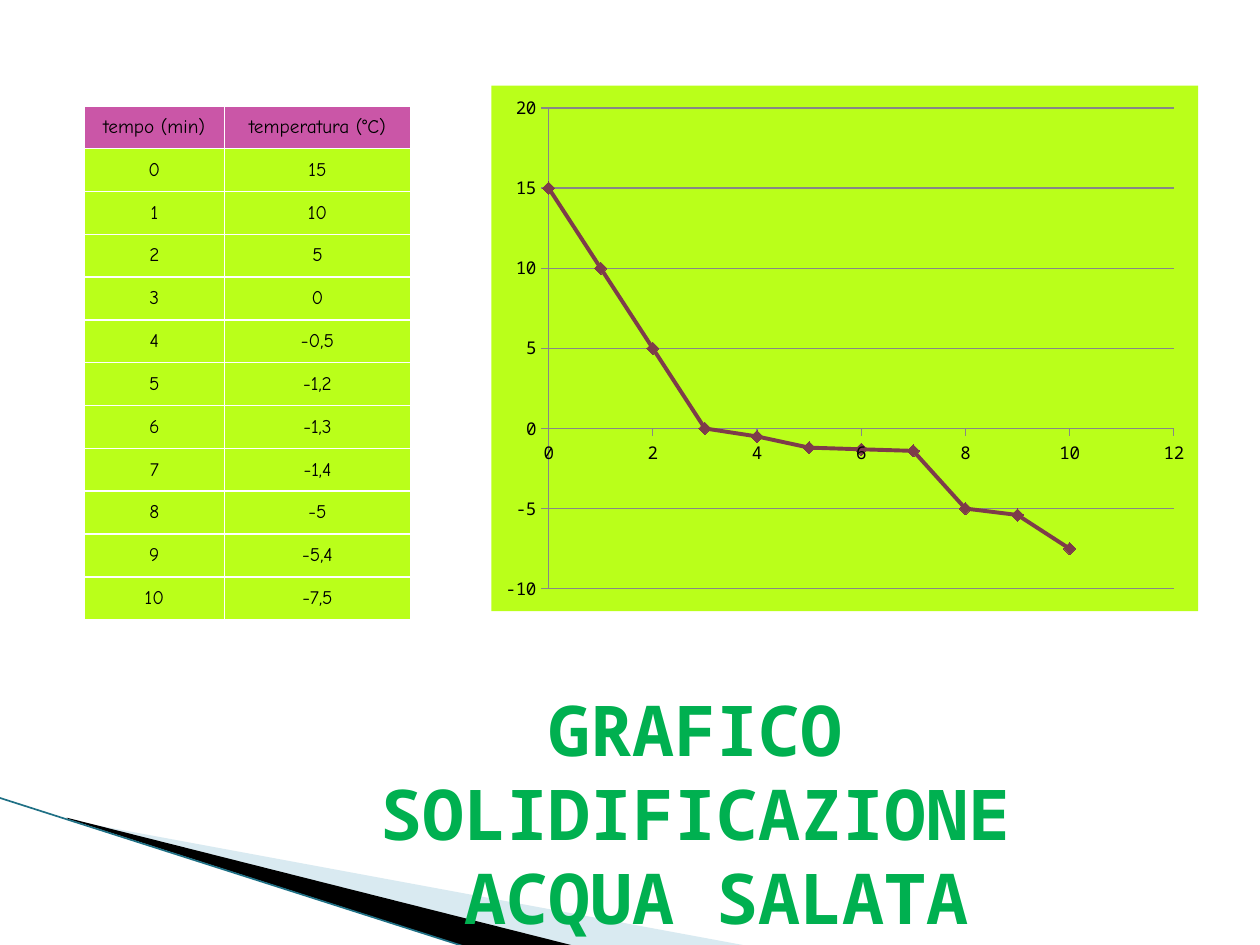
from lxml.etree import SubElement
from pptx import Presentation
from pptx.chart.data import XyChartData
from pptx.dml.color import RGBColor
from pptx.enum.chart import XL_CHART_TYPE, XL_MARKER_STYLE, XL_TICK_MARK
from pptx.enum.shapes import MSO_CONNECTOR
from pptx.enum.text import MSO_ANCHOR, MSO_AUTO_SIZE, PP_ALIGN
from pptx.oxml import parse_xml
from pptx.oxml.ns import nsdecls, qn
from pptx.util import Inches, Pt

TEMPERATURES = [15, 10, 5, 0, -0.5, -1.2, -1.3, -1.4, -5, -5.4, -7.5]
READINGS = list(enumerate(TEMPERATURES))


def rgb(color):
    return RGBColor.from_string(color)


class SlideBuilder:
    MONO = "Noto Sans Mono"
    HAND = "Comic Neue"
    BLACK = "000000"
    LIME = "BAFF1A"
    PINK = "CA56A7"
    GREEN = "00B050"
    MAROON = "7D3C4A"
    GRID = "878787"

    def __init__(self, prs):
        self.s = prs.slides.add_slide(prs.slide_layouts[5])

    def style(self, p, font, size, color, bold=False):
        p.alignment = PP_ALIGN.CENTER
        p.font.name, p.font.size, p.font.bold = font, Pt(size), bold
        p.font.color.rgb = rgb(color)

    def wedge(self, points, color, opacity=100):
        corners = [(Inches(x), Inches(y)) for x, y in points]
        builder = self.s.shapes.build_freeform(*corners[0])
        builder.add_line_segments(corners[1:], close=True)
        sp = builder.convert_to_shape()
        sp.shadow.inherit = False
        sp.line.fill.background()
        sp.fill.solid()
        sp.fill.fore_color.rgb = rgb(color)
        if opacity < 100:
            clr = sp.element.spPr.find(".//" + qn("a:srgbClr"))
            SubElement(clr, qn("a:alpha"), val=str(opacity * 1000))

    def line(self, x1, y1, x2, y2, color, width):
        ends = [Inches(v) for v in (x1, y1, x2, y2)]
        c = self.s.shapes.add_connector(MSO_CONNECTOR.STRAIGHT, *ends)
        c.line.color.rgb = rgb(color)
        c.line.width = Pt(width)
        SubElement(c.element.spPr, qn("a:effectLst"))

    def table(self, x, y, col_widths, row_height, rows):
        table = self.s.shapes.add_table(
            len(rows), len(col_widths), Inches(x), Inches(y),
            Inches(sum(col_widths)), Inches(row_height * len(rows))).table
        for col, width in zip(table.columns, col_widths):
            col.width = Inches(width)
        for i, row in enumerate(rows):
            table.rows[i].height = Inches(row_height)
            for j, text in enumerate(row):
                cell = table.cell(i, j)
                cell.fill.solid()
                cell.fill.fore_color.rgb = rgb(self.LIME if i else self.PINK)
                cell.margin_left = cell.margin_right = 0
                cell.margin_top = cell.margin_bottom = 0
                cell.vertical_anchor = MSO_ANCHOR.MIDDLE
                cell.text = text
                self.style(cell.text_frame.paragraphs[0], self.HAND, 11, self.BLACK)

    def axis(self, axis, low, high, step, grid):
        axis.minimum_scale, axis.maximum_scale, axis.major_unit = low, high, step
        axis.major_tick_mark = XL_TICK_MARK.OUTSIDE
        axis.minor_tick_mark = XL_TICK_MARK.NONE
        axis.has_major_gridlines = grid
        axis.format.line.color.rgb = rgb(self.GRID)
        if grid:
            axis.major_gridlines.format.line.color.rgb = rgb(self.GRID)

    def scatter(self, x, y, w, h, points):
        data = XyChartData()
        series = data.add_series("Series 1")
        for point in points:
            series.add_data_point(*point)
        chart = self.s.shapes.add_chart(
            XL_CHART_TYPE.XY_SCATTER_LINES, Inches(x), Inches(y),
            Inches(w), Inches(h), data).chart
        chart.has_legend = chart.has_title = False
        chart.font.name, chart.font.size = self.MONO, Pt(10)
        chart.font.color.rgb = rgb(self.BLACK)
        self.axis(chart.category_axis, 0, 12, 2, grid=False)
        self.axis(chart.value_axis, -10, 20, 5, grid=True)

        plot = chart.plots[0]
        plot.vary_by_categories = False
        curve = plot.series[0]
        curve.smooth = False
        curve.format.line.color.rgb = rgb(self.MAROON)
        curve.format.line.width = Pt(2.25)
        curve.marker.style = XL_MARKER_STYLE.DIAMOND
        curve.marker.size = 7
        curve.marker.format.fill.solid()
        curve.marker.format.fill.fore_color.rgb = rgb(self.MAROON)
        curve.marker.format.line.color.rgb = rgb(self.MAROON)

        background = parse_xml(
            f'<c:spPr {nsdecls("c", "a")}><a:solidFill><a:srgbClr val="{self.LIME}"/>'
            '</a:solidFill><a:ln><a:noFill/></a:ln></c:spPr>')
        chart.element.find(qn("c:chart")).addnext(background)

    def title(self, x, y, w, h, lines):
        """Fill the title placeholder and bring it in front of the other shapes."""
        sp = self.s.shapes.title
        sp.left, sp.top, sp.width, sp.height = (Inches(v) for v in (x, y, w, h))
        tf = sp.text_frame
        tf.text = "\n".join(lines)
        tf.word_wrap = True
        tf.auto_size = MSO_AUTO_SIZE.NONE
        tf.vertical_anchor = MSO_ANCHOR.TOP
        for p in tf.paragraphs:
            self.style(p, self.MONO, 40, self.GREEN, bold=True)
            p.space_before = Pt(0)
        sp.element.getparent().append(sp.element)


def main():
    prs = Presentation()
    prs.slide_width, prs.slide_height = Inches(10), Inches(7.5)
    b = SlideBuilder(prs)

    b.wedge([(0.55, 6.51), (5.95, 7.51), (4.56, 7.51), (0.55, 6.5)], "A0CBDC", opacity=40)
    b.wedge([(0.53, 6.49), (4.57, 7.51), (3.72, 7.52), (0.54, 6.5)], b.BLACK)
    b.line(-0.01, 6.33, 3.71, 7.52, "1F7085", 0.95)

    rows = [(str(t), str(temp).replace(".", ",")) for t, temp in READINGS]
    b.table(0.67, 0.84, [1.11, 1.48], 0.34, [("tempo (min)", "temperatura (°C)")] + rows)
    b.scatter(3.9, 0.68, 5.61, 4.17, READINGS)
    b.title(1.77, 5.4, 7.5, 1.45, ["GRAFICO SOLIDIFICAZIONE", " ACQUA SALATA"])

    prs.save("out.pptx")


if __name__ == "__main__":
    main()
